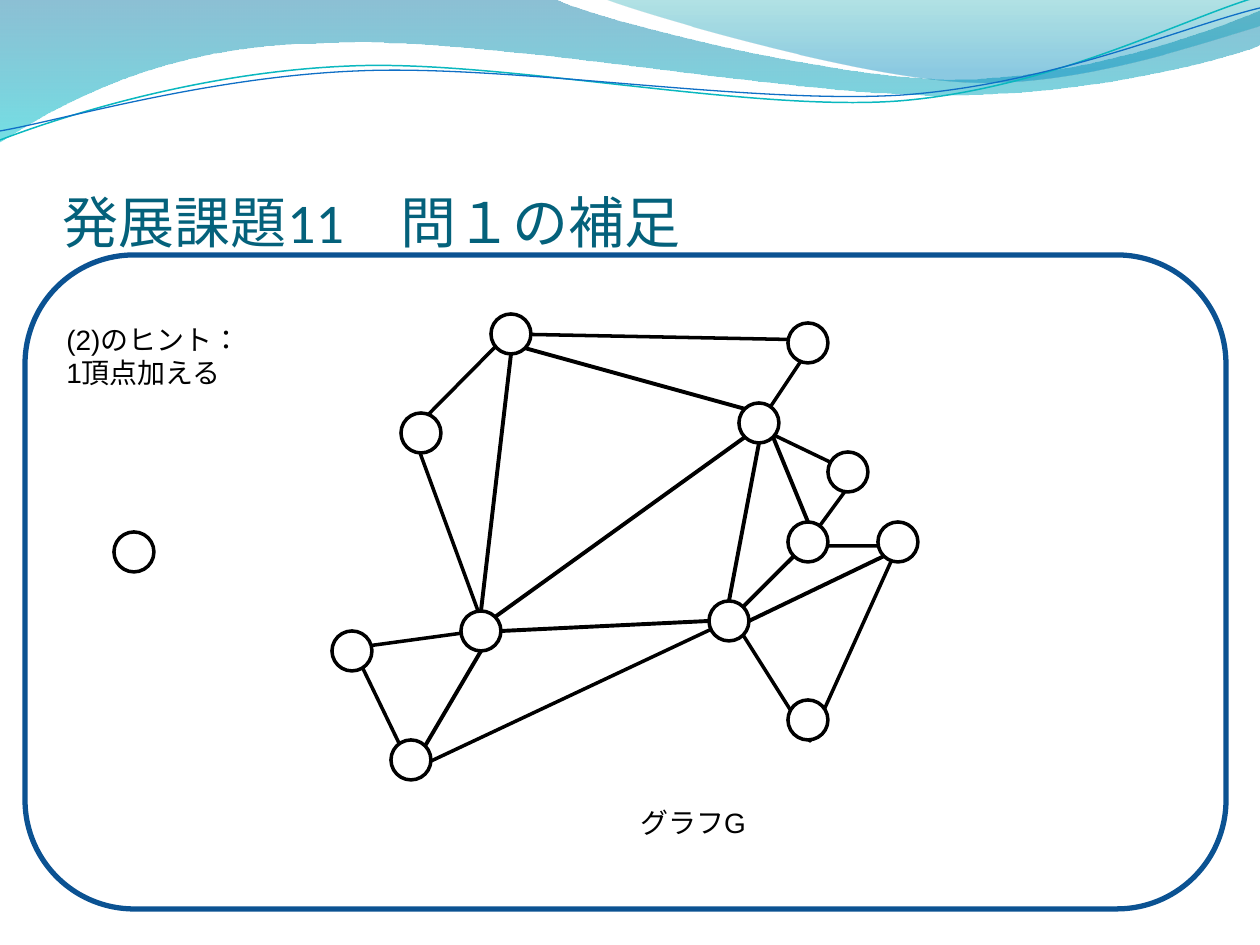
from lxml.etree import SubElement
from pptx import Presentation
from pptx.dml.color import RGBColor
from pptx.enum.lang import MSO_LANGUAGE_ID
from pptx.enum.shapes import MSO_CONNECTOR, MSO_SHAPE
from pptx.enum.text import MSO_ANCHOR
from pptx.oxml.ns import qn
from pptx.util import Emu, Inches, Pt

PX = Inches(1) / 126

BLACK = RGBColor(0x00, 0x00, 0x00)
WHITE = RGBColor(0xFF, 0xFF, 0xFF)
TITLE_TEAL = RGBColor(0x04, 0x61, 0x7B)
PANEL_BLUE = RGBColor(0x0B, 0x52, 0x92)
DEEP_BLUE = RGBColor(0x00, 0x74, 0xA1)
CYAN = RGBColor(0x00, 0xC6, 0xCF)
SEA_GREEN = RGBColor(0x00, 0xA1, 0xA9)
SKY_BLUE = RGBColor(0x00, 0x8B, 0xBF)
STRAND_TEAL = RGBColor(0x0A, 0xB8, 0xBF)
STRAND_BLUE = RGBColor(0x0F, 0x6F, 0xC6)

# A step of two numbers is a straight line; a step of six is a Bezier curve.
# Gradient stops: position, colour, opacity in percent.
WAVES = [
    ([(0, -1), (554, -1), (600, 21, 837, 79, 955, 79),
      (1075, 79, 1207, 33, 1260, 11), (1261, 45),
      (1239, 55, 1096, 96, 940, 95), (781, 95, 481, 35, 324, 43),
      (163, 44, 58, 105, -1, 142)],
     [(0, DEEP_BLUE, 45), (1, CYAN, 55)]),
    ([(604, -1), (641, 14, 859, 78, 969, 82),
      (1079, 87, 1211, 40, 1260, 26), (1260, 0)],
     [(0, SEA_GREEN, 30), (0.8, SKY_BLUE, 45)]),
]
STRANDS = [
    ([(0, 140), (60, 117, 199, 72, 349, 66), (498, 59, 747, 112, 898, 101),
      (1050, 89, 1182, 19, 1257, -3)], STRAND_TEAL, 0.85),
    ([(0, 131), (59, 121, 207, 77, 357, 71), (508, 64, 752, 105, 903, 95),
      (1053, 84, 1185, 26, 1260, 8)], STRAND_BLUE, 0.75),
]

TITLE = "発展課題11　問１の補足"
CAPTION = "グラフG"
HINT = ["(2)のヒント：", "1頂点加える"]

OUTER_CYCLE = [(412, 431), (508, 334), (815, 340), (757, 427), (857, 475),
               (805, 546), (898, 546), (810, 741), (733, 619), (412, 770),
               (353, 648), (485, 630)]
RADIUS = 20
VERTICES = {
    "northwest": (421, 433), "north": (511, 334), "northeast": (808, 343),
    "upper hub": (759, 423), "east": (848, 472), "inner": (808, 542),
    "far east": (898, 542), "southeast": (808, 720), "lower hub": (729, 621),
    "south": (411, 760), "west": (352, 651), "left hub": (481, 631),
}
ADDED_VERTEX = (134, 552)
# Each chord joins a side of one vertex to a side of another.
CHORDS = [
    ("north", "S", "left hub", "N"),
    ("left hub", "S", "south", "NE"),
    ("lower hub", "W", "left hub", "E"),
    ("upper hub", "SW", "left hub", "NE"),
    ("upper hub", "NW", "north", "SE"),
    ("upper hub", "S", "lower hub", "N"),
    ("upper hub", "SE", "inner", "N"),
    ("inner", "SW", "lower hub", "NE"),
    ("far east", "SW", "lower hub", "E"),
]


def px(*values):
    return [Emu(round(value * PX)) for value in values]


def style(shape, line=None, width=None, fill=None):
    shape.shadow.inherit = False
    if fill is None:
        shape.fill.background()
    else:
        shape.fill.solid()
        shape.fill.fore_color.rgb = fill
    if line is None:
        shape.line.fill.background()
    else:
        shape.line.color.rgb = line
        shape.line.width = Pt(width)


def add_outline(page, steps, close):
    """Draw all points as corners, then merge each curve's three into one."""
    builder = page.shapes.build_freeform(*px(*steps[0]), scale=1.0)
    points = [step[i:i + 2] for step in steps[1:]
              for i in range(0, len(step), 2)]
    builder.add_line_segments([px(*point) for point in points], close=close)
    shape = builder.convert_to_shape()
    segments = iter(list(shape._element.spPr.iter(qn("a:lnTo"))))
    for step in steps[1:]:
        segment = next(segments)
        if len(step) == 6:
            segment.tag = qn("a:cubicBezTo")
            for _ in range(2):
                corner = next(segments)
                segment.append(corner[0])
                corner.getparent().remove(corner)
    return shape


def add_wave(page, steps, stops):
    wave = add_outline(page, steps, True)
    style(wave)
    wave.fill.gradient()
    wave.fill.gradient_angle = 270
    for stop, (position, colour, _) in zip(wave.fill.gradient_stops, stops):
        stop.position = position
        stop.color.rgb = colour
    colours = wave._element.spPr.iter(qn("a:srgbClr"))
    for colour, (_, _, opacity) in zip(list(colours), stops):
        SubElement(colour, qn("a:alpha"), val=str(opacity * 1000))


def add_text(page, bounds, lines, font, size, colour, indent=0):
    box = page.shapes.add_textbox(*px(*bounds))
    frame = box.text_frame
    frame.word_wrap = True
    for index, line in enumerate(lines):
        para = frame.paragraphs[0] if index == 0 else frame.add_paragraph()
        if indent:
            para._p.get_or_add_pPr().set("marL", str(px(indent)[0]))
        span = para.add_run()
        span.text = line
        span.font.name = font
        span.font.size = Pt(size)
        span.font.color.rgb = colour
        span.font.language_id = MSO_LANGUAGE_ID.JAPANESE
    return frame


def add_vertex(page, centre):
    x, y = centre
    circle = page.shapes.add_shape(
        MSO_SHAPE.OVAL, *px(x - RADIUS, y - RADIUS, 2 * RADIUS, 2 * RADIUS))
    style(circle, BLACK, 2, WHITE)


def rim_point(name, side):
    """Point on a vertex's circle in a compass direction."""
    x, y = VERTICES[name]
    reach = RADIUS / len(side) ** 0.5
    return (x + reach * (("E" in side) - ("W" in side)),
            y + reach * (("S" in side) - ("N" in side)))


def add_chord(page, start, start_side, end, end_side):
    chord = page.shapes.add_connector(
        MSO_CONNECTOR.STRAIGHT,
        *px(*rim_point(start, start_side), *rim_point(end, end_side)))
    chord.line.color.rgb = BLACK
    chord.line.width = Pt(2.25)
    SubElement(chord._element.spPr, qn("a:effectLst"))


def main():
    deck = Presentation()
    deck.slide_width, deck.slide_height = Inches(10), Inches(7.5)
    page = deck.slides.add_slide(deck.slide_layouts[6])

    for steps, stops in WAVES:
        add_wave(page, steps, stops)
    for steps, colour, width in STRANDS:
        style(add_outline(page, steps, False), colour, width)

    title = add_text(page, (63, 97, 1134, 158), [TITLE],
                     "Calibri", 32, TITLE_TEAL)
    title.vertical_anchor = MSO_ANCHOR.BOTTOM
    title.margin_left = title.margin_right = title.margin_bottom = 0

    panel = page.shapes.add_shape(MSO_SHAPE.ROUNDED_RECTANGLE,
                                  *px(25, 255, 1201, 654))
    style(panel, PANEL_BLUE, 3)

    style(add_outline(page, OUTER_CYCLE, True), BLACK, 2)
    add_text(page, (488, 799, 370, 47), [CAPTION], "Arial", 16, BLACK,
             indent=140)
    for centre in VERTICES.values():
        add_vertex(page, centre)
    for chord in CHORDS:
        add_chord(page, *chord)

    add_text(page, (54, 316, 370, 81), HINT, "Arial", 16, BLACK)
    add_vertex(page, ADDED_VERTEX)

    deck.save("out.pptx")


if __name__ == "__main__":
    main()
